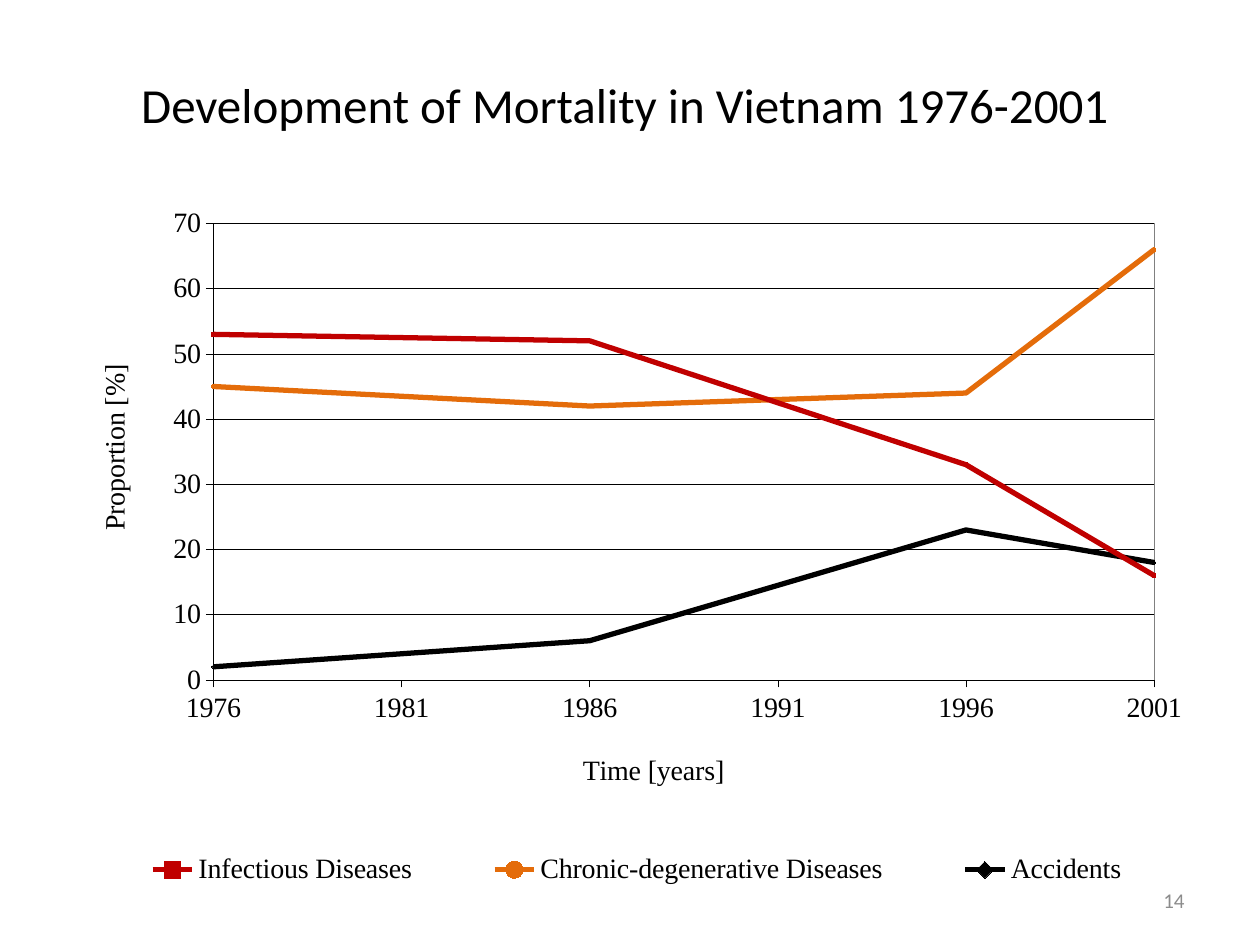
from lxml import etree
from pptx import Presentation
from pptx.chart.data import XyChartData
from pptx.dml.color import RGBColor
from pptx.enum.chart import XL_CHART_TYPE, XL_LEGEND_POSITION, XL_MARKER_STYLE, XL_TICK_MARK
from pptx.enum.text import MSO_ANCHOR, PP_ALIGN
from pptx.oxml import parse_xml
from pptx.oxml.ns import nsdecls, qn
from pptx.util import Pt

BLACK = RGBColor(0x00, 0x00, 0x00)
RED = RGBColor(0xC0, 0x00, 0x00)
ORANGE = RGBColor(0xE4, 0x6C, 0x0A)
GRAY = RGBColor(0x8C, 0x8C, 0x8C)
BORDER = RGBColor(0x80, 0x80, 0x80)

YEARS = (1976, 1986, 1996, 2001)
CAUSES = (
    ("Infectious Diseases", (53, 52, 33, 16), RED, XL_MARKER_STYLE.SQUARE),
    ("Chronic-degenerative Diseases", (45, 42, 44, 66), ORANGE, XL_MARKER_STYLE.CIRCLE),
    ("Accidents", (2, 6, 23, 18), BLACK, XL_MARKER_STYLE.DIAMOND),
)
CHART_FONT = {"name": "Times New Roman", "size": Pt(16), "bold": False}


def apply_format(target, values):
    for name, value in values.items():
        setattr(target, name, value)


def format_font(font, values, color):
    apply_format(font, values)
    font.color.rgb = color


def format_line(line, color, width):
    line.color.rgb = color
    line.width = Pt(width)


def add_label(slide, text, box, size, color, align):
    frame = slide.shapes.add_textbox(*(Pt(length) for length in box)).text_frame
    apply_format(frame, {"word_wrap": True, "vertical_anchor": MSO_ANCHOR.MIDDLE})
    paragraph = frame.paragraphs[0]
    paragraph.alignment = align
    run = paragraph.add_run()
    run.text = text
    format_font(run.font, {"name": "Calibri", "size": Pt(size)}, color)


def place(element, position):
    for old in element.findall(qn("c:layout")):
        element.remove(old)
    layout = parse_xml(f"<c:layout {nsdecls('c')}><c:manualLayout/></c:layout>")
    for tag, value in position.items():
        etree.SubElement(layout[0], qn(f"c:{tag}")).set("val", str(value))
    overlay = element.find(qn("c:overlay"))
    if overlay is None:
        element.insert(0, layout)
    else:
        overlay.addprevious(layout)


def format_axis(axis, title, scale, x, y, rotation):
    apply_format(axis, scale)
    apply_format(axis, {"major_tick_mark": XL_TICK_MARK.OUTSIDE,
                        "minor_tick_mark": XL_TICK_MARK.NONE})
    format_line(axis.format.line, BLACK, 0.25)
    format_font(axis.tick_labels.font, CHART_FONT, BLACK)
    apply_format(axis.tick_labels, {"number_format": "General",
                                    "number_format_is_linked": False})
    frame = axis.axis_title.text_frame
    frame.text = title
    format_font(frame.paragraphs[0].runs[0].font, CHART_FONT, BLACK)
    body = frame._txBody.bodyPr
    body.set("rot", str(rotation))
    body.set("vert", "horz")
    place(axis.axis_title._element, {"xMode": "edge", "yMode": "edge", "x": x, "y": y})


def format_series(series, color, marker):
    series.smooth = True
    format_line(series.format.line, color, 3)
    apply_format(series.marker, {"style": marker, "size": 2})
    series.marker.format.fill.solid()
    series.marker.format.fill.fore_color.rgb = color
    series.marker.format.line.color.rgb = color


def format_plot_area(chart):
    area = chart._chartSpace.chart.plotArea
    place(area, {"layoutTarget": "inner", "xMode": "edge", "yMode": "edge",
                 "x": 0.143, "y": 0.088, "w": 0.793, "h": 0.577})
    area.append(parse_xml(
        f"<c:spPr {nsdecls('c', 'a')}><a:noFill/><a:ln w='3175'><a:solidFill>"
        f"<a:srgbClr val='{BORDER}'/></a:solidFill></a:ln></c:spPr>"))


def format_legend(chart):
    chart.has_legend = True
    apply_format(chart.legend, {"position": XL_LEGEND_POSITION.BOTTOM,
                                "include_in_layout": False})
    format_font(chart.legend.font, CHART_FONT, BLACK)
    place(chart.legend._element, {"xMode": "edge", "yMode": "edge",
                                  "x": 0.03, "y": 0.87, "w": 0.94, "h": 0.07})


def add_mortality_chart(slide, box):
    mortality = XyChartData()
    for name, shares, _, _ in CAUSES:
        cause = mortality.add_series(name)
        for year, share in zip(YEARS, shares):
            cause.add_data_point(year, share)
    chart = slide.shapes.add_chart(XL_CHART_TYPE.XY_SCATTER_SMOOTH,
                                   *(Pt(length) for length in box), mortality).chart
    chart.has_title = False
    format_font(chart.font, CHART_FONT, BLACK)
    chart.plots[0].vary_by_categories = False
    format_axis(chart.category_axis, "Time [years]",
                {"minimum_scale": 1976, "maximum_scale": 2001, "major_unit": 5,
                 "has_major_gridlines": False}, 0.45, 0.75, 0)
    format_axis(chart.value_axis, "Proportion [%]",
                {"minimum_scale": 0, "maximum_scale": 70, "major_unit": 10,
                 "has_major_gridlines": True}, 0.04, 0.26, -5400000)
    format_line(chart.value_axis.major_gridlines.format.line, BLACK, 0.25)
    for series, (_, _, color, marker) in zip(chart.plots[0].series, CAUSES):
        format_series(series, color, marker)
    format_plot_area(chart)
    format_legend(chart)


def main():
    deck = Presentation()
    apply_format(deck, {"slide_width": Pt(720), "slide_height": Pt(540)})
    slide = deck.slides.add_slide(deck.slide_layouts[6])
    add_label(slide, "Development of Mortality in Vietnam 1976-2001",
              (12, 23, 690, 73), 28, BLACK, PP_ALIGN.CENTER)
    add_mortality_chart(slide, (25, 88, 678, 452))
    add_label(slide, "14", (516, 500, 168, 29), 12, GRAY, PP_ALIGN.RIGHT)
    deck.save("out.pptx")


if __name__ == "__main__":
    main()
